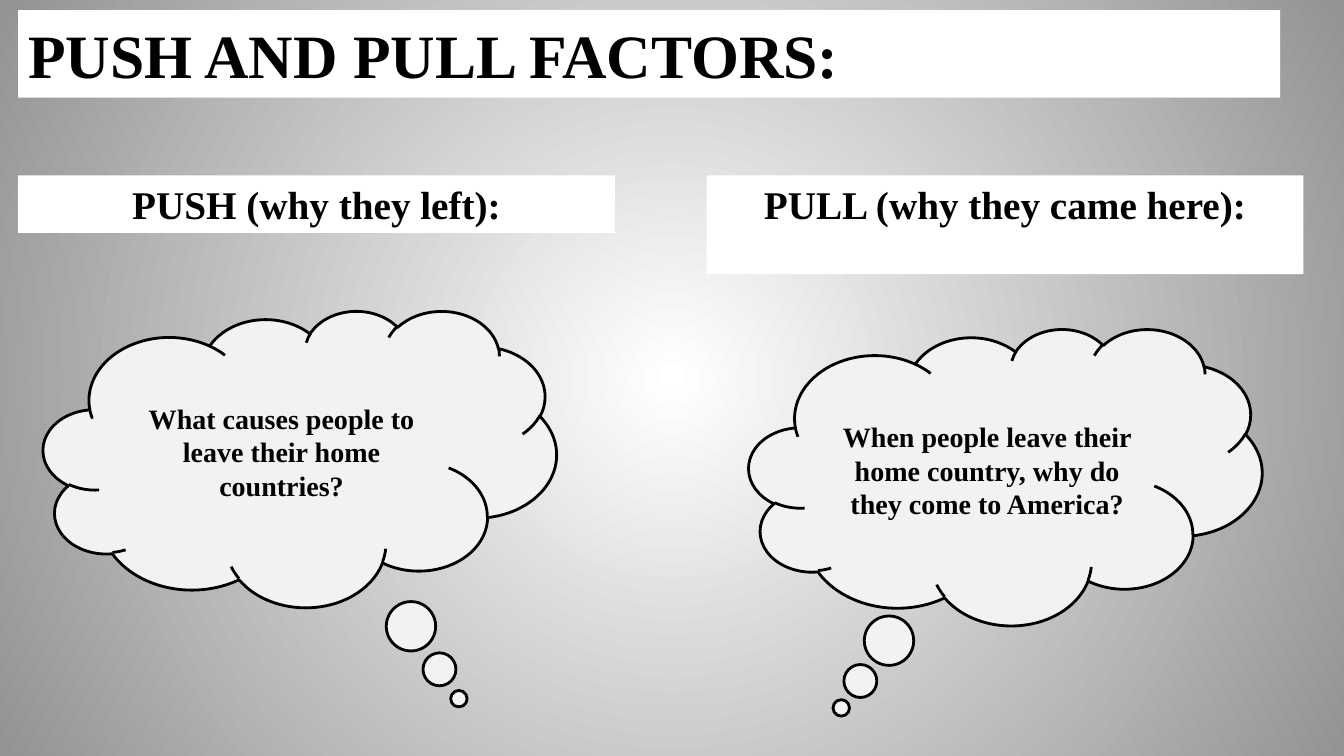
"""Build the push and pull factors slide."""
from dataclasses import dataclass

from lxml.etree import SubElement
from pptx import Presentation
from pptx.dml.color import RGBColor
from pptx.enum.shapes import MSO_SHAPE
from pptx.enum.text import MSO_ANCHOR, MSO_AUTO_SIZE, PP_ALIGN
from pptx.oxml.ns import qn
from pptx.slide import Slide
from pptx.text.text import TextFrame
from pptx.util import Pt


@dataclass(frozen=True)
class Theme:
    font: str = "Times New Roman"
    ink: RGBColor = RGBColor(0, 0, 0)
    paper: RGBColor = RGBColor(255, 255, 255)
    cloud: RGBColor = RGBColor(0xF2, 0xF2, 0xF2)
    edge: RGBColor = RGBColor(0x93, 0x93, 0x93)
    title_size: int = 44
    heading_size: int = 28
    question_size: int = 20


@dataclass(frozen=True)
class Factor:
    heading: str
    heading_left: float
    heading_height: float
    question: str
    cloud_left: float
    cloud_top: float
    tail: tuple[float, float]


THEME = Theme()
MARGIN = 12.96
HEADING_TOP, HEADING_WIDTH = 125.28, 426.24
CLOUD_WIDTH, CLOUD_HEIGHT = 366.48, 211.68

FACTORS = [
    Factor("PUSH (why they left):", MARGIN, 41.04,
           "What causes people to leave their home countries?",
           30.96, 221.76, (0.31, 0.81)),
    Factor("PULL (why they came here):", 504.72, 70.56,
           "When people leave their home country, why do they come to America?",
           534.96, 234.72, (-0.32, 0.78)),
]


def write(tf: TextFrame, text: str, *, size: int,
          align: PP_ALIGN = PP_ALIGN.CENTER,
          anchor: MSO_ANCHOR = MSO_ANCHOR.TOP) -> None:
    tf.word_wrap = True
    tf.auto_size = MSO_AUTO_SIZE.NONE
    tf.vertical_anchor = anchor
    p = tf.paragraphs[0]
    p.alignment = align
    r = p.add_run()
    r.text = text
    r.font.name = THEME.font
    r.font.size = Pt(size)
    r.font.bold = True
    r.font.color.rgb = THEME.ink


def paint_background(s: Slide) -> None:
    fill = s.background.fill
    fill.gradient()
    for stop, color in zip(fill.gradient_stops, (THEME.paper, THEME.edge)):
        stop.color.rgb = color
    grad = s.background._cSld.find(".//" + qn("a:gradFill"))
    grad.remove(grad.find(qn("a:lin")))
    circle = SubElement(grad, qn("a:path"), path="circle")
    SubElement(circle, qn("a:fillToRect"), l="50000", t="50000", r="50000", b="50000")


def add_title(s: Slide, text: str) -> None:
    sp = s.shapes.title
    sp.left, sp.top, sp.width, sp.height = Pt(MARGIN), Pt(7.2), Pt(901.44), Pt(62.64)
    sp.fill.solid()
    sp.fill.fore_color.rgb = THEME.paper
    write(sp.text_frame, text, size=THEME.title_size,
          align=PP_ALIGN.LEFT, anchor=MSO_ANCHOR.MIDDLE)


def add_heading(s: Slide, factor: Factor) -> None:
    sp = s.shapes.add_textbox(Pt(factor.heading_left), Pt(HEADING_TOP),
                              Pt(HEADING_WIDTH), Pt(factor.heading_height))
    sp.fill.solid()
    sp.fill.fore_color.rgb = THEME.paper
    write(sp.text_frame, factor.heading, size=THEME.heading_size)


def add_cloud(s: Slide, factor: Factor) -> None:
    sp = s.shapes.add_shape(MSO_SHAPE.CLOUD_CALLOUT, Pt(factor.cloud_left),
                            Pt(factor.cloud_top), Pt(CLOUD_WIDTH), Pt(CLOUD_HEIGHT))
    sp.shadow.inherit = False
    sp.adjustments[0], sp.adjustments[1] = factor.tail
    sp.fill.solid()
    sp.fill.fore_color.rgb = THEME.cloud
    sp.line.color.rgb = THEME.ink
    sp.line.width = Pt(2)
    write(sp.text_frame, factor.question, size=THEME.question_size,
          anchor=MSO_ANCHOR.MIDDLE)


def main() -> None:
    prs = Presentation()
    prs.slide_width, prs.slide_height = Pt(960), Pt(540)
    s = prs.slides.add_slide(prs.slide_layouts[5])
    paint_background(s)
    add_title(s, "PUSH AND PULL FACTORS:")
    for factor in FACTORS:
        add_heading(s, factor)
        add_cloud(s, factor)
    prs.save("out.pptx")


if __name__ == "__main__":
    main()
